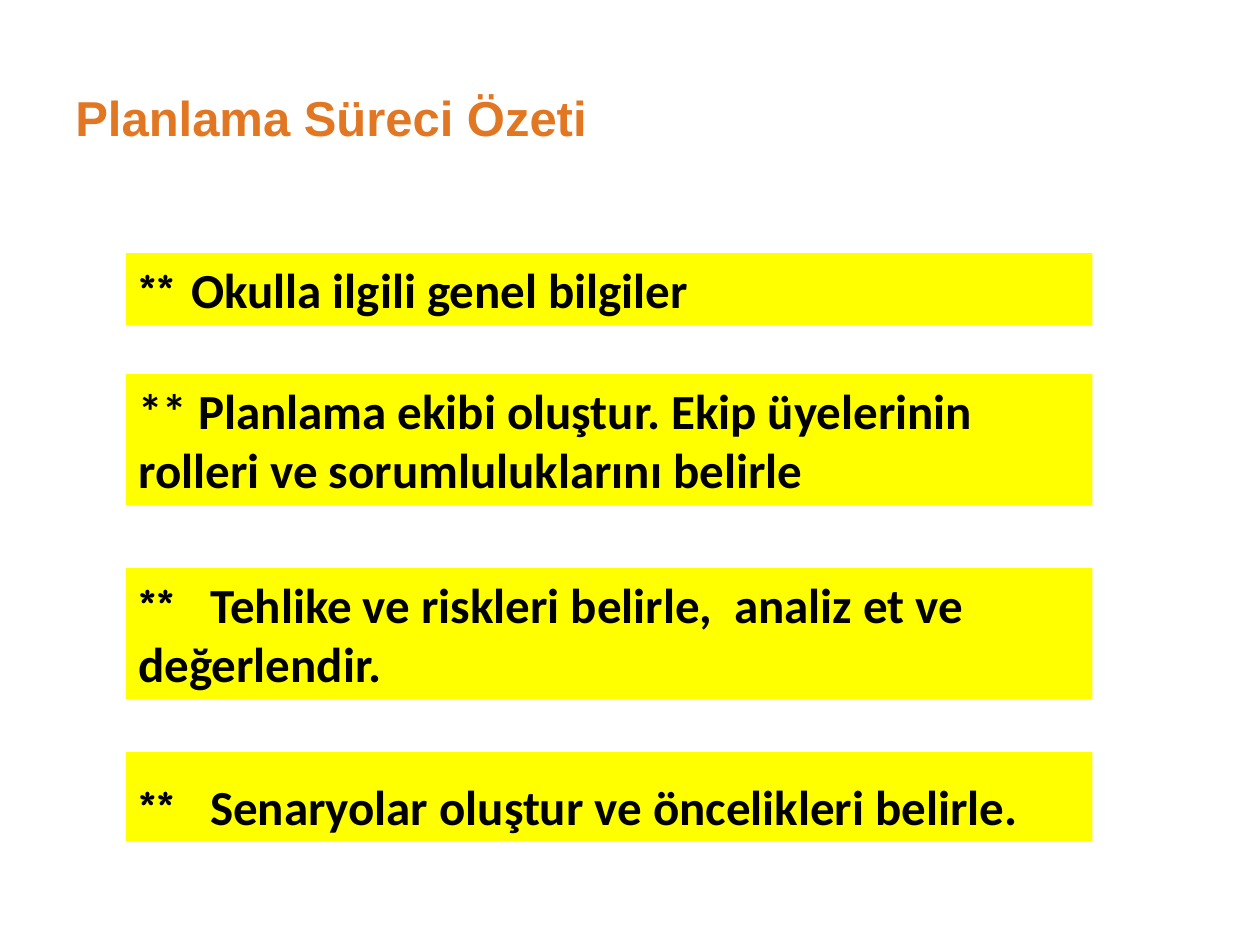
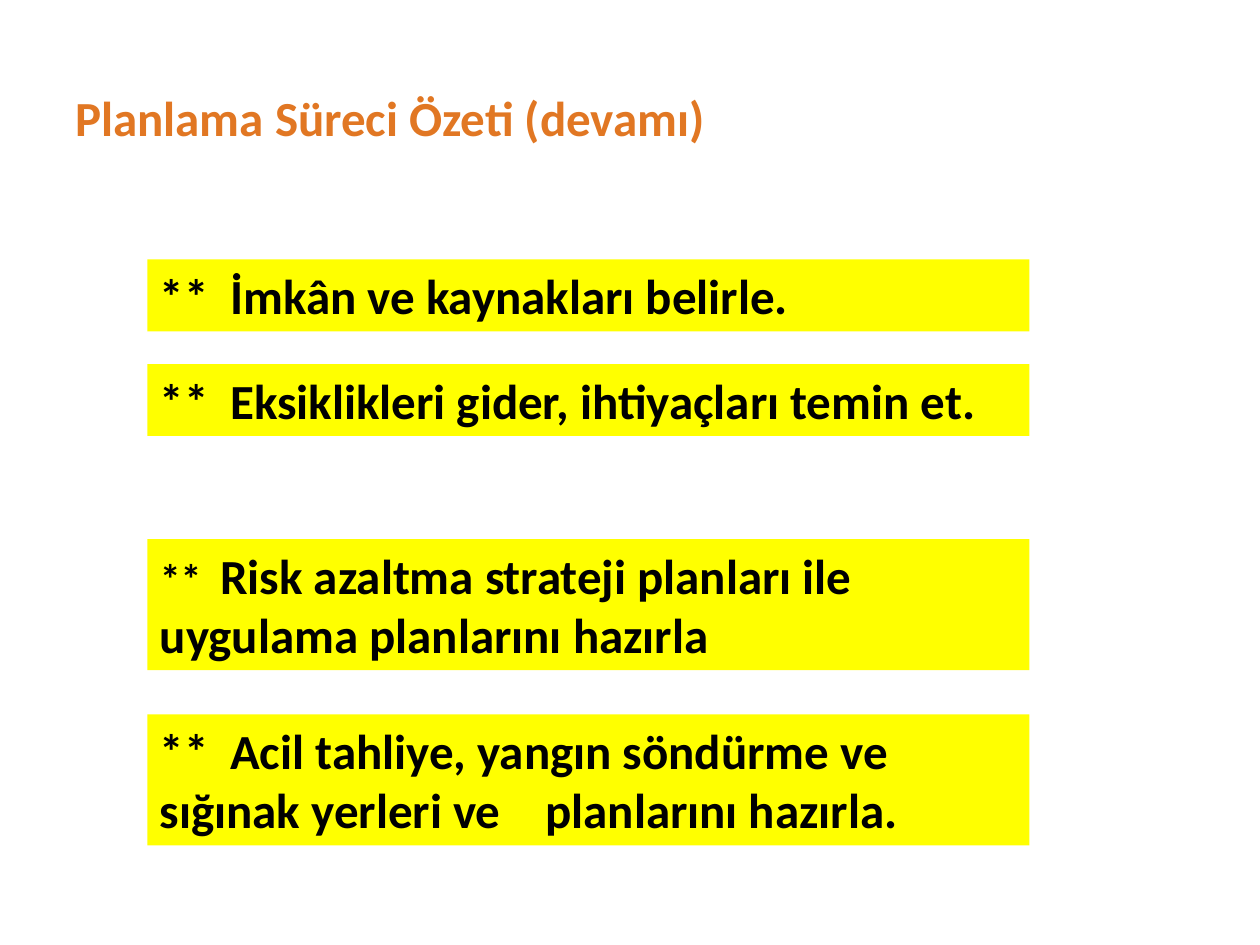
"""Builds two slides that summarise the school emergency planning process."""
from dataclasses import dataclass

from lxml import etree
from pptx import Presentation
from pptx.dml.color import RGBColor
from pptx.enum.shapes import MSO_SHAPE
from pptx.enum.text import MSO_ANCHOR, MSO_AUTO_SIZE, PP_ALIGN
from pptx.oxml.ns import qn
from pptx.util import Inches, Pt

RECTANGLE = MSO_SHAPE.RECTANGLE
MIDDLE, TOP = MSO_ANCHOR.MIDDLE, MSO_ANCHOR.TOP
LEFT, JUSTIFY = PP_ALIGN.LEFT, PP_ALIGN.JUSTIFY
GROW, FIXED = MSO_AUTO_SIZE.SHAPE_TO_FIT_TEXT, MSO_AUTO_SIZE.NONE


@dataclass(frozen=True)
class Theme:
    accent: str = "E17723"
    band: str = "FFFF00"
    ink: str = "000000"
    body_font: str = "Calibri"
    title_font: str = "Arial"
    mark_font: str = "Comic Neue"
    size: int = 28
    small: int = 24


THEME = Theme()
SLIDE_SIZE = (10, 7.5)
TITLE_PLACE = (0.5, 0.3, 6.08, 1.25)
LINE_HEIGHT, PADDING = 0.47, 0.1

PAGES = [
    {
        "title": "Planlama Süreci Özeti", "font": THEME.title_font,
        "left": 1, "width": 7.67,
        "steps": [
            {"top": 2.01, "mark_font": THEME.mark_font, "tabs": [0.42],
             "text": "\tOkulla ilgili genel bilgiler"},
            {"top": 2.97, "lines": 2,
             "text": " Planlama ekibi oluştur. Ekip üyelerinin rolleri ve sorumluluklarını belirle"},
            {"top": 4.51, "lines": 2, "mark_font": THEME.mark_font, "tabs": [0.57, 4.73],
             "text": "\tTehlike ve riskleri belirle,\tanaliz et ve değerlendir."},
            {"top": 5.97, "mark_font": THEME.mark_font, "tabs": [0.57],
             "spacing": 1.3, "align": JUSTIFY,
             "text": "\tSenaryolar oluştur ve öncelikleri belirle."},
        ],
    },
    {
        "title": "Planlama Süreci Özeti (devamı)", "font": THEME.body_font,
        "left": 1.17, "width": 7,
        "steps": [
            {"top": 2.06, "tabs": [0.56], "text": "\tİmkân ve kaynakları belirle."},
            {"top": 2.89, "tabs": [0.56], "text": "\tEksiklikleri gider, ihtiyaçları temin et."},
            {"top": 4.28, "lines": 2, "tabs": [0.48], "mark_size": THEME.small,
             "text": "\tRisk azaltma strateji planları ile uygulama planlarını hazırla"},
            {"top": 5.67, "lines": 2, "tabs": [0.56, 3.06],
             "text": "\tAcil tahliye, yangın söndürme ve sığınak yerleri ve\tplanlarını hazırla."},
        ],
    },
]


def prepare_frame(box, anchor, auto_size):
    frame = box.text_frame
    frame.word_wrap = True
    frame.vertical_anchor = anchor
    frame.auto_size = auto_size
    return frame.paragraphs[0]


def add_span(para, text, font, color, size=THEME.size):
    span = para.add_run()
    span.text = text
    span.font.name = font
    span.font.size = Pt(size)
    span.font.bold = True
    span.font.color.rgb = RGBColor.from_string(color)


def add_tabs(para, positions):
    tab_list = etree.SubElement(para._p.get_or_add_pPr(), qn("a:tabLst"))
    for position in positions:
        etree.SubElement(tab_list, qn("a:tab"), pos=str(Inches(position)), algn="l")


def add_title(page, text, font):
    box = page.shapes.add_textbox(*map(Inches, TITLE_PLACE))
    para = prepare_frame(box, MIDDLE, FIXED)
    add_span(para, text, font, THEME.accent)


def add_step(page, left, width, step):
    spacing = step.get("spacing", 1)
    height = step.get("lines", 1) * spacing * LINE_HEIGHT + PADDING
    place = (left, step["top"], width, height)
    box = page.shapes.add_shape(RECTANGLE, *map(Inches, place))
    box.shadow.inherit = False
    box.fill.solid()
    box.fill.fore_color.rgb = RGBColor.from_string(THEME.band)
    box.line.fill.background()
    para = prepare_frame(box, TOP, GROW)
    if "tabs" in step:
        add_tabs(para, step["tabs"])
    para.alignment = step.get("align", LEFT)
    para.line_spacing = float(spacing)
    add_span(para, "**", step.get("mark_font", THEME.body_font), THEME.ink,
             step.get("mark_size", THEME.size))
    add_span(para, step["text"], THEME.body_font, THEME.ink)


def main():
    deck = Presentation()
    deck.slide_width, deck.slide_height = map(Inches, SLIDE_SIZE)
    for content in PAGES:
        page = deck.slides.add_slide(deck.slide_layouts[6])
        add_title(page, content["title"], content["font"])
        for step in content["steps"]:
            add_step(page, content["left"], content["width"], step)
    deck.save("out.pptx")


if __name__ == "__main__":
    main()
